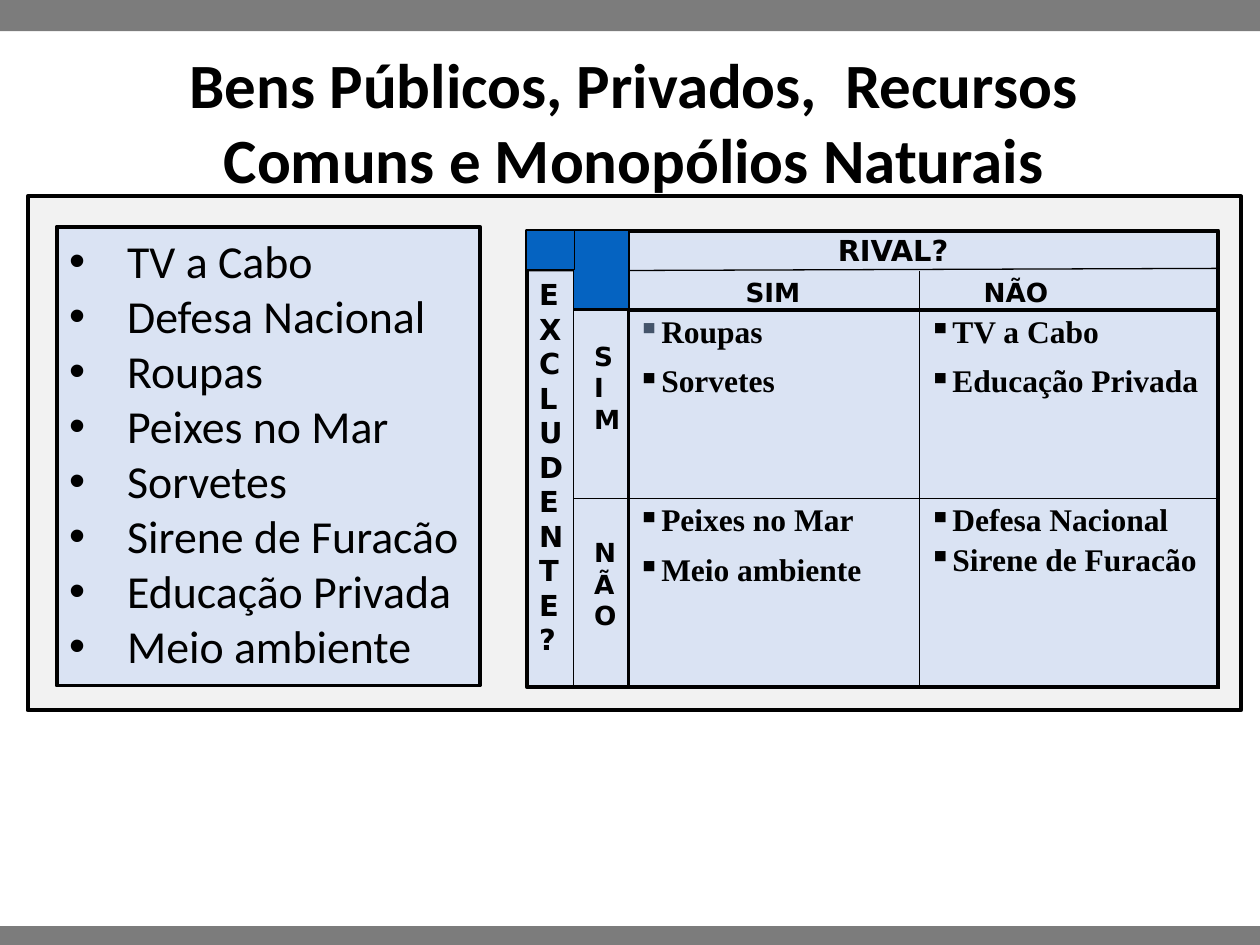
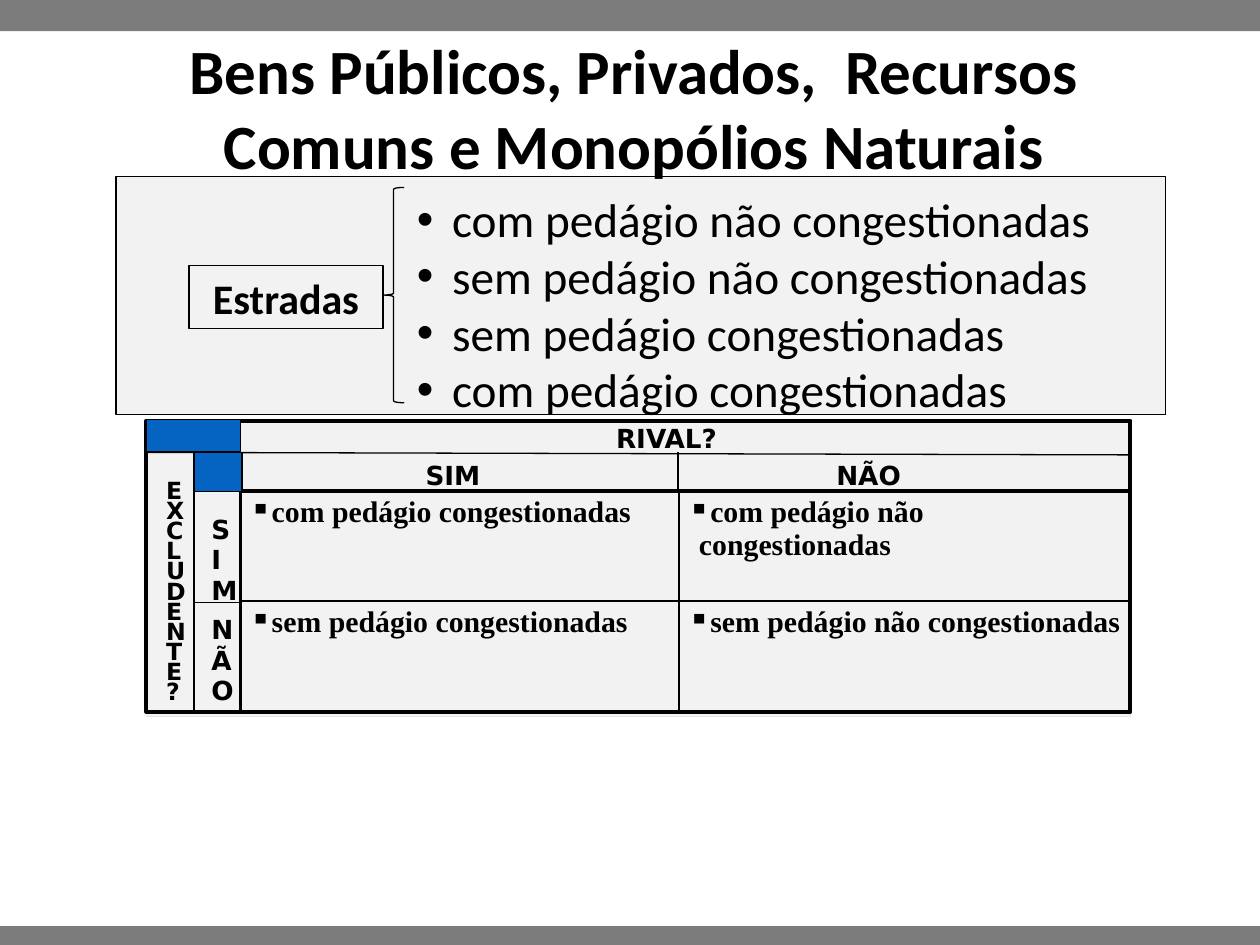
"""Build two slides that sort goods by rivalry and excludability."""
from lxml import etree
from pptx import Presentation
from pptx.dml.color import RGBColor
from pptx.enum import shapes, text
from pptx.oxml import ns
from pptx.util import Cm, Pt

HUE = {"ink": "000000", "band": "7C7C7C", "panel": "F2F2F2", "sky": "DAE3F3",
       "rim": "E7E6E6", "blue": "0563C1", "slate": "44546A"}
HEAD = "Bens Públicos, Privados,  Recursos Comuns e Monopólios Naturais"
SANS, SERIF, LABEL = "Calibri", "Times New Roman", "DejaVu Sans"
MID = text.PP_ALIGN.CENTER


def write(frame, lines, font=LABEL, size=15, bold=True, align=None, gap=0,
          pitch=None, mark=None, dent=0, tint=None):
    frame.word_wrap = True
    frame.auto_size = text.MSO_AUTO_SIZE.NONE
    for i, line in enumerate(lines):
        para = frame.add_paragraph() if i else frame.paragraphs[0]
        para.alignment = align
        para.space_before = Pt(gap if i else 0)
        if pitch:
            para.line_spacing = Pt(pitch)
        run = para.add_run()
        run.text = line
        run.font.name, run.font.size, run.font.bold = font, Pt(size), bold
        run.font.color.rgb = RGBColor.from_string(HUE["ink"])
        if mark:
            prop = para._p.get_or_add_pPr()
            prop.set("marL", str(Cm(dent)))
            prop.set("indent", str(-Cm(dent)))
            if tint and i == 0:
                shade = etree.SubElement(prop, ns.qn("a:buClr"))
                etree.SubElement(shade, ns.qn("a:srgbClr"), val=HUE[tint])
            etree.SubElement(prop, ns.qn("a:buChar"), char=mark)


def draw(slide, spot, fill=None, line="ink", width=0.75,
         kind=shapes.MSO_SHAPE.RECTANGLE):
    form = slide.shapes.add_shape(kind, *map(Cm, spot))
    form.shadow.inherit = False
    if fill:
        form.fill.solid()
        form.fill.fore_color.rgb = RGBColor.from_string(HUE[fill])
    else:
        form.fill.background()
    if line:
        form.line.color.rgb = RGBColor.from_string(HUE[line])
        form.line.width = Pt(width)
    else:
        form.line.fill.background()
    return form


PAGES = [
    dict(
        top=1.19, panel=(0.56, 3.96, 24.46, 10.36), edge=2.25,
        list=(1.14, 4.57, 8.53, 9.25), size=26.2, dent=1.17, box=True,
        items=["TV a Cabo", "Defesa Nacional", "Roupas", "Peixes no Mar",
               "Sorvetes", "Sirene de Furacão", "Educação Privada", "Meio ambiente"],
        back=(10.62, 4.65, 13.94, 9.2), frame=(10.62, 4.65, 13.94, 9.2), fill="sky",
        grid=(12.67, 6.25), cols=(5.87, 6.02), row=3.8, font=18,
        cells=[[["Roupas", "Sorvetes"], ["TV a Cabo", "Educação Privada"]],
               [["Peixes no Mar", "Meio ambiente"],
                ["Defesa Nacional", "Sirene de Furacão"]]],
        dents=(0.48, 0.48), tint="slate",
        tags=[("RIVAL?", 16.64, 4.57, 16.5), ("SIM", 14.78, 5.44, 15),
              ("NÃO", 19.58, 5.44, 15)],
        stacks=[("EXCLUDENTE?", 10.62, 5.46, 16.5, 19.7), ("SIM", 11.73, 6.73, 15, 18),
                ("NÃO", 11.73, 10.69, 15, 18)],
        rules=[(10.62, 5.46, 24.56, 5.41), (11.56, 13.85, 11.56, 4.65),
               (12.67, 10.05, 11.56, 10.05), (12.67, 6.25, 11.56, 6.25),
               (18.54, 6.25, 18.54, 5.46)],
        blues=[(11.56, 4.65, 1.12, 1.57), (10.62, 4.65, 0.97, 0.79)]),
    dict(
        top=0.91, panel=(2.34, 3.56, 21.16, 4.8), edge=0.75,
        list=(8.15, 3.71, 15.09, 4.88), size=27, dent=0.71, box=False,
        items=["com pedágio não congestionadas", "sem pedágio não congestionadas",
               "sem pedágio congestionadas", "com pedágio congestionadas"],
        back=(2.95, 8.46, 19.84, 5.99), frame=(2.95, 8.48, 19.84, 5.87), fill="panel",
        grid=(4.85, 9.9), cols=(8.84, 9.1), row=2.22, font=17,
        cells=[[["com pedágio congestionadas"], ["com pedágio não congestionadas"]],
               [["sem pedágio congestionadas"], ["sem pedágio não congestionadas"]]],
        dents=(0.22, 0.38), tint=None,
        tags=[("RIVAL?", 12.17, 8.38, 15), ("SIM", 8.33, 9.14, 15),
              ("NÃO", 16.61, 9.14, 15)],
        stacks=[("EXCLUDENTE?", 3.1, 9.63, 13.5, 11.5), ("SIM", 4.01, 10.24, 15, 17.4),
                ("NÃO", 4.01, 12.27, 15, 17.4)],
        rules=[(2.95, 9.12, 22.79, 9.17), (3.91, 9.12, 3.91, 14.35),
               (4.85, 12.14, 3.91, 12.14), (13.67, 9.86, 13.67, 9.12)],
        blues=[(3.91, 9.12, 0.97, 0.79), (2.95, 8.46, 1.9, 0.64)]),
]

deck = Presentation()
deck.slide_width, deck.slide_height = Cm(25.4), Cm(19.05)

for page in PAGES:
    slide = deck.slides.add_slide(deck.slide_layouts[1])
    tree = slide.shapes._spTree
    title, body = slide.placeholders
    if page is PAGES[0]:
        for spot in [(0, 18.67, 25.4, 0.38), (0, 0, 25.4, 0.63)]:
            band = draw(slide, spot, "band", None)
            deck.slide_master.shapes._spTree.append(band._element)

    draw(slide, page["panel"], "panel", "ink", page["edge"])
    draw(slide, page["back"], page["fill"], "rim")

    body.left, body.top, body.width, body.height = map(Cm, page["list"])
    write(body.text_frame, page["items"], SANS, page["size"], False,
          mark="•", dent=page["dent"])
    if page["box"]:
        body.fill.solid()
        body.fill.fore_color.rgb = RGBColor.from_string(HUE["sky"])
        body.line.color.rgb = RGBColor.from_string(HUE["ink"])
        body.line.width = Pt(2.25)
    tree.append(body._element)

    table = slide.shapes.add_table(2, 2, *map(Cm, page["grid"]), Cm(sum(page["cols"])),
                                   Cm(2 * page["row"])).table
    table.first_row = table.horz_banding = False
    for c, wide in enumerate(page["cols"]):
        table.columns[c].width = Cm(wide)
    for r, row in enumerate(page["cells"]):
        table.rows[r].height = Cm(page["row"])
        for c, goods in enumerate(row):
            cell = table.cell(r, c)
            cell.margin_left = cell.margin_right = Cm(0.18)
            cell.margin_top = cell.margin_bottom = Cm(0.1)
            write(cell.text_frame, goods, SERIF, page["font"], mark="▪",
                  dent=page["dents"][r], gap=2.7 if r and c else 8.4,
                  tint=None if r or c else page["tint"])
            prop = cell._tc.get_or_add_tcPr()
            for side, outer in [("L", c == 0), ("R", c == 1), ("T", r == 0), ("B", r == 1)]:
                edge = etree.SubElement(prop, ns.qn("a:ln" + side),
                                        w=str(Pt(2.25 if outer else 1)))
                paint = etree.SubElement(edge, ns.qn("a:solidFill"))
                etree.SubElement(paint, ns.qn("a:srgbClr"), val=HUE["ink"])
            cell.fill.background()

    for word, x, y, size in page["tags"]:
        tag = slide.shapes.add_textbox(Cm(x), Cm(y), Cm(4.6), Cm(0.9))
        write(tag.text_frame, [word], size=size)
    for word, x, y, size, pitch in page["stacks"]:
        stack = slide.shapes.add_textbox(Cm(x), Cm(y), Cm(1.2),
                                         Pt(pitch * len(word)) + Cm(0.25))
        write(stack.text_frame, word, size=size, pitch=pitch)

    draw(slide, page["frame"], width=2.25)
    for ends in page["rules"]:
        rule = slide.shapes.add_connector(shapes.MSO_CONNECTOR.STRAIGHT, *map(Cm, ends))
        rule.line.color.rgb = RGBColor.from_string(HUE["ink"])
        rule.line.width = Pt(0.75)
        etree.SubElement(rule._element.spPr, ns.qn("a:effectLst"))
    for spot in page["blues"]:
        draw(slide, spot, "blue")

    if not page["box"]:
        draw(slide, (7.72, 3.78, 0.43, 4.34), kind=shapes.MSO_SHAPE.LEFT_BRACE)
        road = draw(slide, (3.81, 5.36, 3.91, 1.27))
        write(road.text_frame, ["Estradas"], SANS, 24, align=MID)

    title.left, title.top, title.width, title.height = map(
        Cm, (1.3, page["top"], 22.96, 2.49))
    write(title.text_frame, [HEAD], SANS, 36, align=MID)
    title.text_frame.vertical_anchor = text.MSO_ANCHOR.MIDDLE
    tree.append(title._element)

deck.save("out.pptx")
